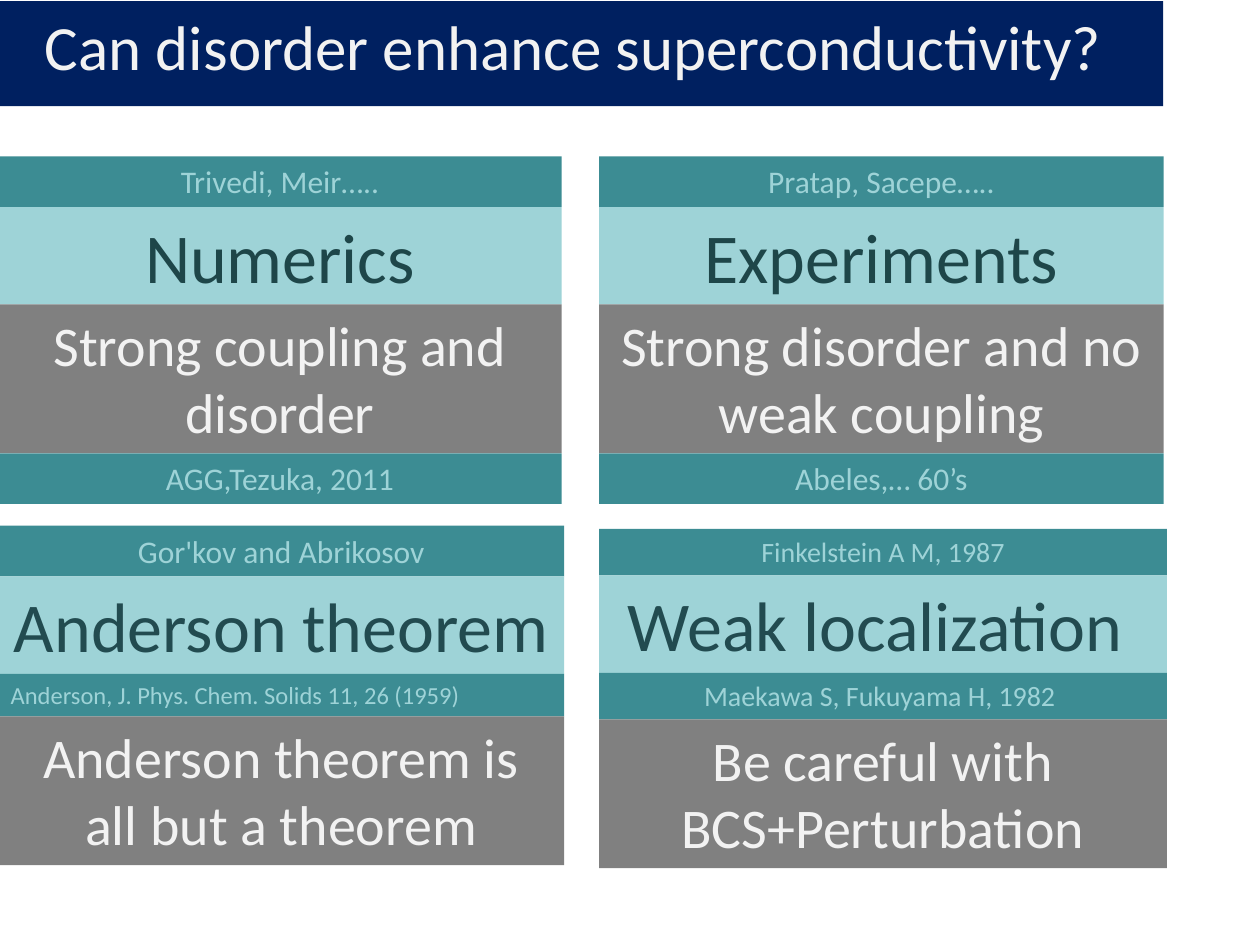
import pptx
import pptx.util
import pptx.dml.color
import pptx.enum.shapes
import pptx.enum.text
from dataclasses import dataclass

Pt = pptx.util.Pt
RGB = pptx.dml.color.RGBColor.from_string
ALIGN = pptx.enum.text.PP_ALIGN


@dataclass(frozen=True)
class Theme:
    font: str = "Calibri"
    navy: str = "002060"
    teal: str = "3C8C93"
    aqua: str = "9ED3D7"
    gray: str = "808080"
    light: str = "F2F2F2"
    method_ink: str = "1E4649"
    theory_ink: str = "224B50"
    title: int = 36
    topic: int = 40
    claim: int = 32
    names: int = 18
    cite: int = 16
    small_cite: int = 14


T = Theme()

# band kind: height, fill, text colour, text size, alignment
BANDS = {
    "names": (29, T.teal, T.aqua, T.names, ALIGN.CENTER),
    "cite": (26.6, T.teal, T.aqua, T.cite, ALIGN.CENTER),
    "small_cite": (24.3, T.teal, T.aqua, T.small_cite, ALIGN.LEFT),
    "method": (55.7, T.aqua, T.method_ink, T.topic, ALIGN.CENTER),
    "theory": (55.7, T.aqua, T.theory_ink, T.topic, ALIGN.CENTER),
    "claim": (85, T.gray, T.light, T.claim, ALIGN.CENTER),
}

LEFT, RIGHT = -1, 342.4

# panel: left, top, width, bands from top to bottom
PANELS = [
    (LEFT, 89.3, 322, [
        ("names", "Trivedi, Meir….."),
        ("method", "Numerics"),
        ("claim", "Strong coupling and disorder"),
        ("names", "AGG,Tezuka, 2011"),
    ]),
    (RIGHT, 89.3, 322.6, [
        ("names", "Pratap, Sacepe….."),
        ("method", "Experiments"),
        ("claim", "Strong disorder and no weak coupling"),
        ("names", "Abeles,… 60’s"),
    ]),
    (LEFT, 300.4, 323.4, [
        ("names", "Gor'kov and Abrikosov"),
        ("theory", "Anderson theorem"),
        ("small_cite", "Anderson, J. Phys. Chem. Solids 11, 26 (1959)"),
        ("claim", "Anderson theorem is all but a theorem"),
    ]),
    (RIGHT, 302.2, 324.4, [
        ("cite", "Finkelstein A M, 1987"),
        ("theory", "Weak localization "),
        ("cite", "Maekawa S, Fukuyama H, 1982 "),
        ("claim", "Be careful with BCS+Perturbation"),
    ]),
]


def fill_band(sp, text, fill, color, size, align):
    """Colour a shape and set its one paragraph of text."""
    sp.fill.solid()
    sp.fill.fore_color.rgb = RGB(fill)
    sp.line.fill.background()
    tf = sp.text_frame
    tf.text = text
    tf.word_wrap = True
    tf.auto_size = pptx.enum.text.MSO_AUTO_SIZE.SHAPE_TO_FIT_TEXT
    tf.vertical_anchor = pptx.enum.text.MSO_ANCHOR.TOP
    p = tf.paragraphs[0]
    p.alignment = align
    p.font.name = T.font
    p.font.size = Pt(size)
    p.font.color.rgb = RGB(color)


prs = pptx.Presentation()
prs.slide_width, prs.slide_height = Pt(720), Pt(540)
s = prs.slides.add_slide(prs.slide_layouts.get_by_name("Title Only"))

title = s.shapes.title
title.left, title.top, title.width, title.height = Pt(-1.4), Pt(0.6), Pt(666), Pt(50.9)
fill_band(title, "Can disorder enhance superconductivity? ",
          T.navy, T.light, T.title, ALIGN.CENTER)

for left, top, width, bands in PANELS:
    for kind, text in bands:
        height, *style = BANDS[kind]
        sp = s.shapes.add_shape(pptx.enum.shapes.MSO_SHAPE.RECTANGLE,
                                Pt(left), Pt(top), Pt(width), Pt(height))
        sp.shadow.inherit = False
        fill_band(sp, text, *style)
        top += height

prs.save("out.pptx")
